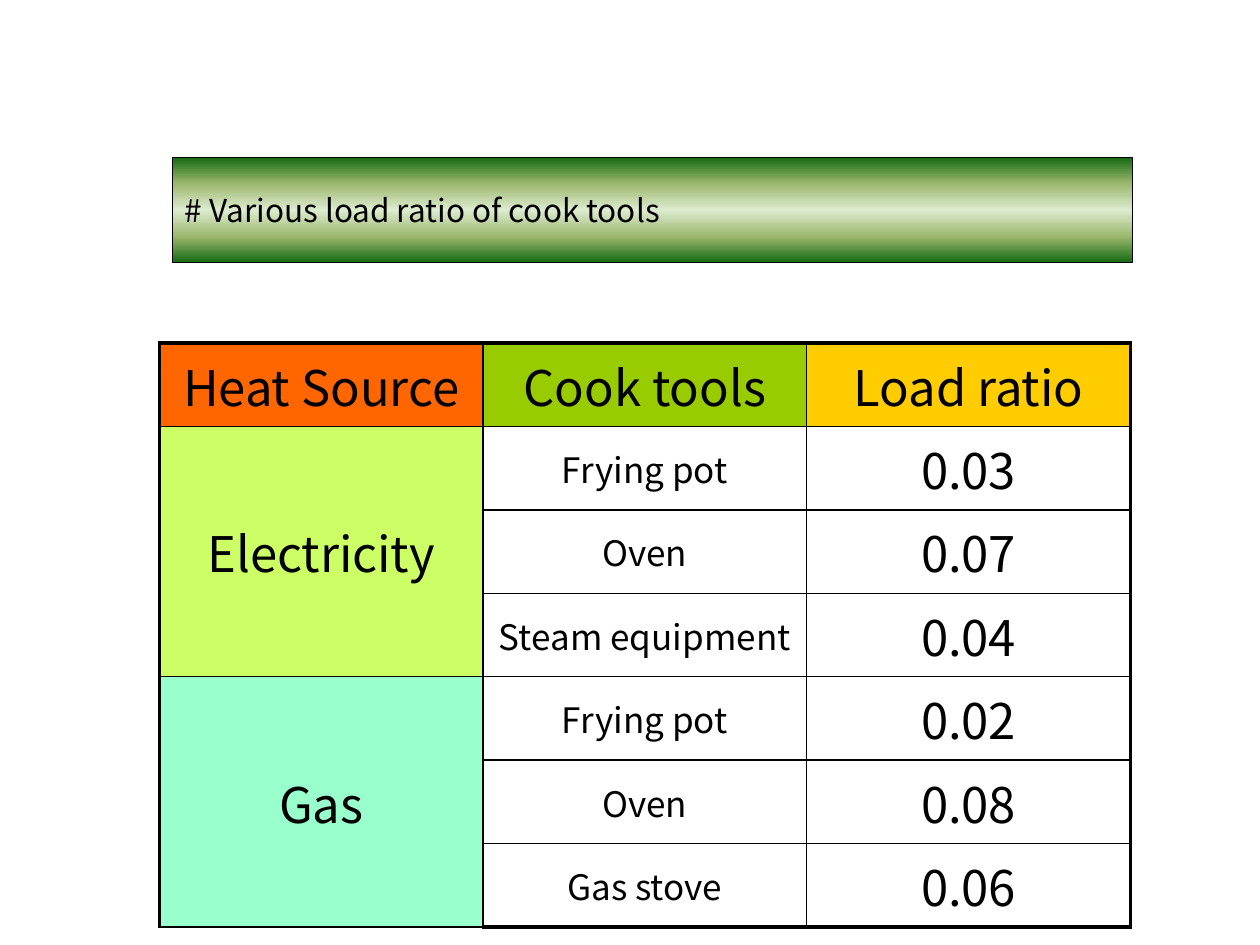
"""Build a slide with a heading bar and a table of cook tool load ratios."""
import pptx
import pptx.dml.color
import pptx.enum.shapes
import pptx.enum.text
import pptx.oxml
import pptx.oxml.ns
import pptx.util

Pt = pptx.util.Pt
RGB = pptx.dml.color.RGBColor
BLACK = RGB(0x00, 0x00, 0x00)
ORANGE = RGB(0xFF, 0x66, 0x00)
GREEN = RGB(0x99, 0xCC, 0x00)
GOLD = RGB(0xFF, 0xCC, 0x00)
LIME = RGB(0xCC, 0xFF, 0x66)
MINT = RGB(0x99, 0xFF, 0xCC)
FOREST = RGB(0x15, 0x6B, 0x13)
MOSS = RGB(0x9C, 0xB8, 0x6E)
PALE = RGB(0xDD, 0xEB, 0xCF)

HEADS = [("Heat Source", ORANGE), ("Cook tools", GREEN), ("Load ratio", GOLD)]
GROUPS = [
    ("Electricity", LIME,
     [("Frying pot", "0.03"), ("Oven", "0.07"), ("Steam equipment", "0.04")]),
    ("Gas", MINT,
     [("Frying pot", "0.02"), ("Oven", "0.08"), ("Gas stove", "0.06")]),
]


class Deck:
    font = "Noto Sans CJK KR"
    thin, thick = 1, 2.25

    def __init__(self):
        self.prs = pptx.Presentation()
        self.prs.slide_width, self.prs.slide_height = Pt(720), Pt(540)
        self.slide = self.prs.slides.add_slide(self.prs.slide_layouts[6])

    def label(self, frame, text, size, align):
        par = frame.paragraphs[0]
        par.text = text
        par.alignment = align
        par.font.name = self.font
        par.font.size = Pt(size)
        par.font.bold = False
        par.font.color.rgb = BLACK

    def bar(self, text, left, top, width, height, stops):
        box = self.slide.shapes.add_shape(
            pptx.enum.shapes.MSO_SHAPE.RECTANGLE,
            Pt(left), Pt(top), Pt(width), Pt(height))
        box.shadow.inherit = False
        box.fill.gradient()
        box.fill.gradient_angle = 270
        glist = box._element.spPr.find(".//" + pptx.oxml.ns.qn("a:gsLst"))
        for old in list(glist):
            glist.remove(old)
        for pos, color in stops:
            glist.append(pptx.oxml.parse_xml(
                f'<a:gs {pptx.oxml.ns.nsdecls("a")} pos="{pos * 1000}">'
                f'<a:srgbClr val="{color}"/></a:gs>'))
        box.line.color.rgb = BLACK
        box.line.width = Pt(0.75)
        box.text_frame.word_wrap = True
        box.text_frame.vertical_anchor = pptx.enum.text.MSO_ANCHOR.MIDDLE
        self.label(box.text_frame, text, 18, pptx.enum.text.PP_ALIGN.LEFT)

    def edge(self, cell, side, width):
        cell._tc.get_or_add_tcPr().append(pptx.oxml.parse_xml(
            f'<a:ln{side} {pptx.oxml.ns.nsdecls("a")} w="{int(Pt(width))}">'
            f'<a:solidFill><a:srgbClr val="{BLACK}"/></a:solidFill>'
            f'</a:ln{side}>'))

    def grid(self, rows, cols, left, top, width, height):
        table = self.slide.shapes.add_table(
            rows, cols, Pt(left), Pt(top), Pt(width), Pt(height)).table
        table.first_row = table.horz_banding = False
        for row in range(rows):
            for col in range(cols):
                cell = table.cell(row, col)
                outer = {"L": col == 0, "R": col == cols - 1,
                         "T": row == 0, "B": row == rows - 1}
                for side, rim in outer.items():
                    self.edge(cell, side, self.thick if rim else self.thin)
                cell.fill.background()
        return table

    def cell(self, cell, text, size=28, fill=None):
        cell.vertical_anchor = pptx.enum.text.MSO_ANCHOR.MIDDLE
        self.label(cell.text_frame, text, size, pptx.enum.text.PP_ALIGN.CENTER)
        if fill is not None:
            cell.fill.solid()
            cell.fill.fore_color.rgb = fill


def main():
    deck = Deck()
    deck.bar("# Various load ratio of cook tools", 98.5, 90, 548.75, 60,
             [(0, FOREST), (25, MOSS), (50, PALE), (75, MOSS), (100, FOREST)])

    count = 1 + sum(len(tools) for _, _, tools in GROUPS)
    table = deck.grid(count, len(HEADS), 91, 196, 555, 286)
    for col, (head, color) in enumerate(HEADS):
        deck.cell(table.cell(0, col), head, fill=color)
    row = 1
    for source, color, tools in GROUPS:
        first = table.cell(row, 0)
        first.merge(table.cell(row + len(tools) - 1, 0))
        deck.cell(first, source, fill=color)
        for tool, ratio in tools:
            deck.cell(table.cell(row, 1), tool, 20)
            deck.cell(table.cell(row, 2), ratio)
            row += 1

    deck.prs.save("out.pptx")


if __name__ == "__main__":
    main()
